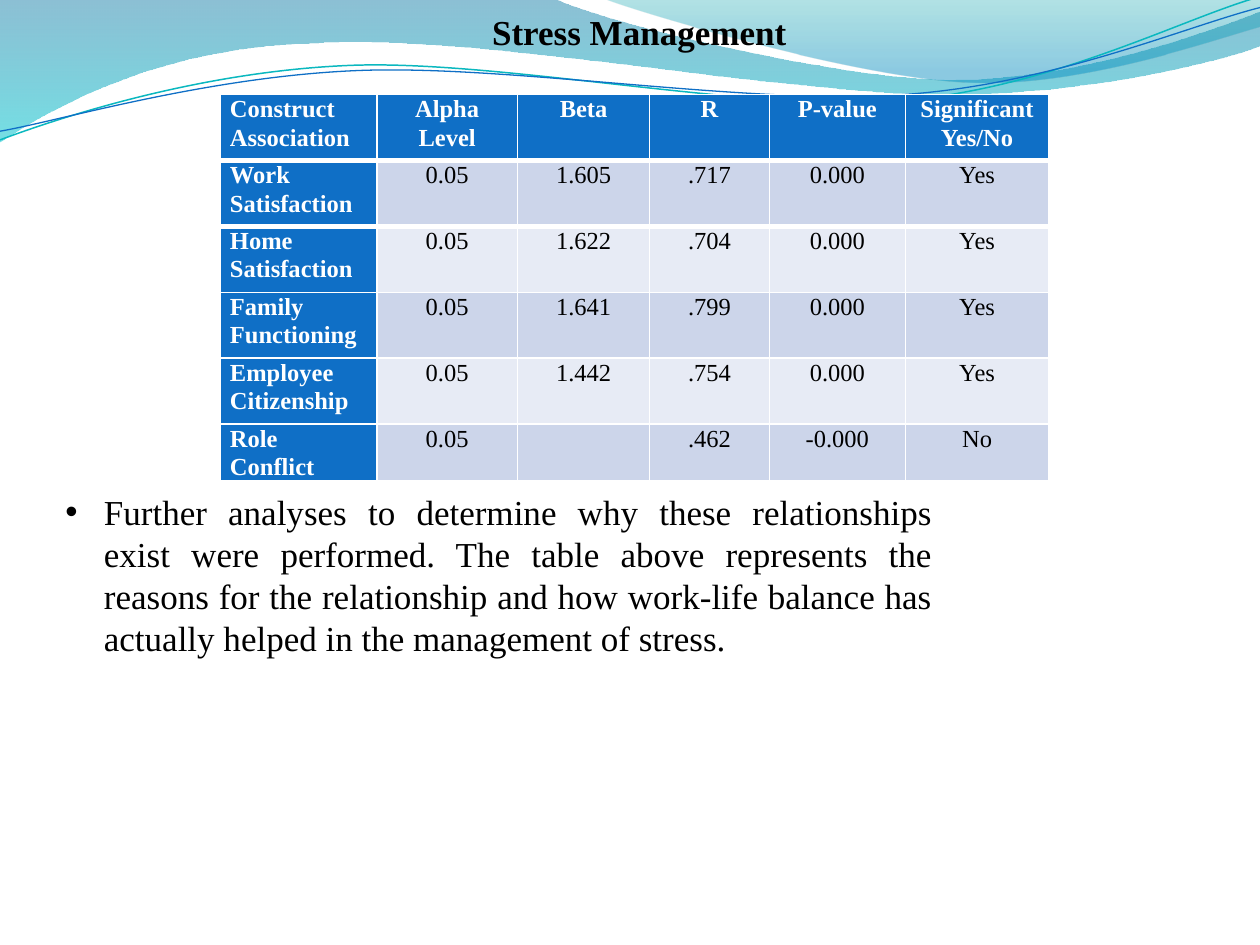
from dataclasses import dataclass
from lxml.etree import Element, SubElement as Sub
from pptx import Presentation
from pptx.dml.color import RGBColor
from pptx.enum.text import MSO_ANCHOR as Anchor, MSO_AUTO_SIZE as Auto, PP_ALIGN as Align
from pptx.oxml.ns import qn
from pptx.util import Pt

WHITE = RGBColor(0xFF, 0xFF, 0xFF)
BLACK = RGBColor(0, 0, 0)
BLUE = RGBColor(0x0F, 0x6F, 0xC6)
TEAL = RGBColor(0x0A, 0xB8, 0xBF)
BAND = RGBColor(0xCC, 0xD5, 0xEA)
PALE = RGBColor(0xE7, 0xEB, 0xF5)
DEEP = RGBColor(0, 0x74, 0xA1)
AQUA = RGBColor(0, 0xC6, 0xCF)
SEA = RGBColor(0, 0xA1, 0xA9)
SKY = RGBColor(0, 0x8B, 0xBF)

LEFT = [(-0.7, -0.7), (316.8, -0.7),
        (342.7, 12.2, 478.1, 45.4, 545.8, 45.4),
        (614.2, 45.4, 689.8, 18.7, 720, 6.5),
        (720.7, 25.9),
        (707.8, 31.7, 626.4, 54.7, 537.1, 54),
        (447.8, 54, 275, 20.2, 185, 24.5),
        (92.9, 25.9, 33.1, 59.8, -0.7, 81.4)]
RIGHT = [(344.9, -0.7),
         (366.5, 7.9, 491, 44.6, 553.7, 46.8),
         (616.3, 49.7, 691.9, 23, 720, 15.1),
         (720, -0.7)]
UPPER = [(-1.4, 63),
         (33.8, 51.7, 114.1, 29.4, 199.8, 29.9),
         (284.8, 30.3, 425.8, 67.3, 512.4, 64.9),
         (599, 62.4, 676.5, 25.7, 720.2, 15.5)]
LOWER = [(-1.1, 58),
         (32.9, 53.8, 118.3, 32.5, 204.1, 33),
         (290.6, 33.4, 428.9, 63.8, 515.5, 61.4),
         (601.3, 59.6, 678.4, 30.1, 721.4, 21.3)]
TILT = 357.3

COLS = [89.3, 80.5, 75.5, 68.4, 77.7, 82]
ROWS = [37.7] * 5 + [18.9]
DATA = [
    ["Construct Association", "Alpha Level", "Beta", "R", "P-value", "Significant Yes/No"],
    ["Work Satisfaction", "0.05", "1.605", ".717", "0.000", "Yes"],
    ["Home Satisfaction", "0.05", "1.622", ".704", "0.000", "Yes"],
    ["Family Functioning", "0.05", "1.641", ".799", "0.000", "Yes"],
    ["Employee Citizenship", "0.05", "1.442", ".754", "0.000", "Yes"],
    ["Role Conflict", "0.05", "", ".462", "-0.000", "No"],
]
NOTE = ("Further analyses to determine why these relationships exist were performed. "
        "The table above represents the reasons for the relationship and how work-life "
        "balance has actually helped in the management of stress.")


@dataclass
class Deck:
    slide: object
    font: str = "Times New Roman"

    def style(self, para, size, color, bold=False):
        for run in para.runs:
            run.font.name = self.font
            run.font.size = Pt(size)
            run.font.bold = bold
            run.font.color.rgb = color

    def curve(self, path, close):
        first, *rest = path
        dots = [(Pt(x), Pt(y)) for part in rest for x, y in zip(part[::2], part[1::2])]
        pen = self.slide.shapes.build_freeform(Pt(first[0]), Pt(first[1]))
        pen.add_line_segments(dots, close=close)
        shape = pen.convert_to_shape()
        shape.shadow.inherit = False
        legs = iter(list(shape.element.iter(qn("a:lnTo"))))
        for part in rest:
            group = [next(legs) for _ in part[::2]]
            if len(group) == 3:
                bend = Element(qn("a:cubicBezTo"))
                group[0].addprevious(bend)
                for leg in group:
                    bend.append(leg[0])
                    leg.getparent().remove(leg)
        return shape

    def wave(self, path, stops):
        shape = self.curve(path, True)
        shape.line.fill.background()
        fill = shape.fill
        fill.gradient()
        fill.gradient_angle = 270
        for stop, (place, color, _) in zip(fill.gradient_stops, stops):
            stop.position = place
            stop.color.rgb = color
        for node, (_, _, alpha) in zip(shape.element.iter(qn("a:srgbClr")), stops):
            Sub(node, qn("a:alpha")).set("val", str(alpha * 1000))

    def line(self, path, color, width):
        shape = self.curve(path, False)
        shape.rotation = TILT
        shape.fill.background()
        shape.line.color.rgb = color
        shape.line.width = Pt(width)

    def text(self, box, words, area, align, anchor, bold=False, wrap=True):
        box.left, box.top, box.width, box.height = map(Pt, area)
        frame = box.text_frame
        frame.text = words
        frame.word_wrap = wrap
        frame.auto_size = Auto.NONE
        frame.vertical_anchor = anchor
        para = frame.paragraphs[0]
        para.alignment = align
        para.space_before = Pt(0)
        self.style(para, 20, BLACK, bold)
        box.element.getparent().append(box.element)
        return para

    def title(self, words, area):
        self.text(self.slide.shapes.title, words, area, Align.LEFT, Anchor.TOP, True, False)

    def list(self, words, area):
        box = self.slide.placeholders[1]
        para = self.text(box, words, area, Align.JUSTIFY, Anchor.BOTTOM)
        props = para._p.get_or_add_pPr()
        props.set("marL", str(Pt(22)))
        props.set("indent", str(Pt(-22)))
        Sub(props, qn("a:buFont")).set("typeface", "Arial")
        Sub(props, qn("a:buChar")).set("char", "•")

    def table(self, data, left, top):
        area = map(Pt, (left, top, sum(COLS), sum(ROWS)))
        grid = self.slide.shapes.add_table(len(data), len(COLS), *area).table
        grid.first_col = True
        for col, width in zip(grid.columns, COLS):
            col.width = Pt(width)
        for r, (row, high) in enumerate(zip(data, ROWS)):
            grid.rows[r].height = Pt(high)
            for c, words in enumerate(row):
                self.cell(grid.cell(r, c), words, r, c)

    def cell(self, cell, words, r, c):
        head = r == 0 or c == 0
        cell.fill.solid()
        cell.fill.fore_color.rgb = BLUE if head else BAND if r % 2 else PALE
        cell.margin_left = cell.margin_right = Pt(5.4)
        cell.margin_top = cell.margin_bottom = Pt(0)
        cell.text_frame.text = words
        para = cell.text_frame.paragraphs[0]
        para.alignment = Align.CENTER if c else Align.JUSTIFY
        para.line_spacing = 1.05
        para.space_after = Pt(8)
        self.style(para, 14, WHITE if head else BLACK, head)
        if r == 0:
            self.rule(cell, "a:lnB", 3)
        if r == 1:
            self.rule(cell, "a:lnT", 3)

    def rule(self, cell, side, width):
        edge = Element(qn(side), w=str(Pt(width)))
        Sub(Sub(edge, qn("a:solidFill")), qn("a:srgbClr")).set("val", str(WHITE))
        cell._tc.get_or_add_tcPr().insert(0, edge)


def main():
    show = Presentation()
    show.slide_width, show.slide_height = Pt(720), Pt(540)
    deck = Deck(show.slides.add_slide(show.slide_layouts[1]))
    deck.wave(LEFT, [(0, DEEP, 45), (1, AQUA, 55)])
    deck.wave(RIGHT, [(0, SEA, 30), (0.8, SKY, 45)])
    deck.line(UPPER, TEAL, 0.85)
    deck.line(LOWER, BLUE, 0.75)
    deck.table(DATA, 126, 54)
    deck.title("Stress Management", (274, 2.2, 184, 67.7))
    deck.list(NOTE, (30.2, 211.7, 509.8, 168.2))
    show.save("out.pptx")


if __name__ == "__main__":
    main()
